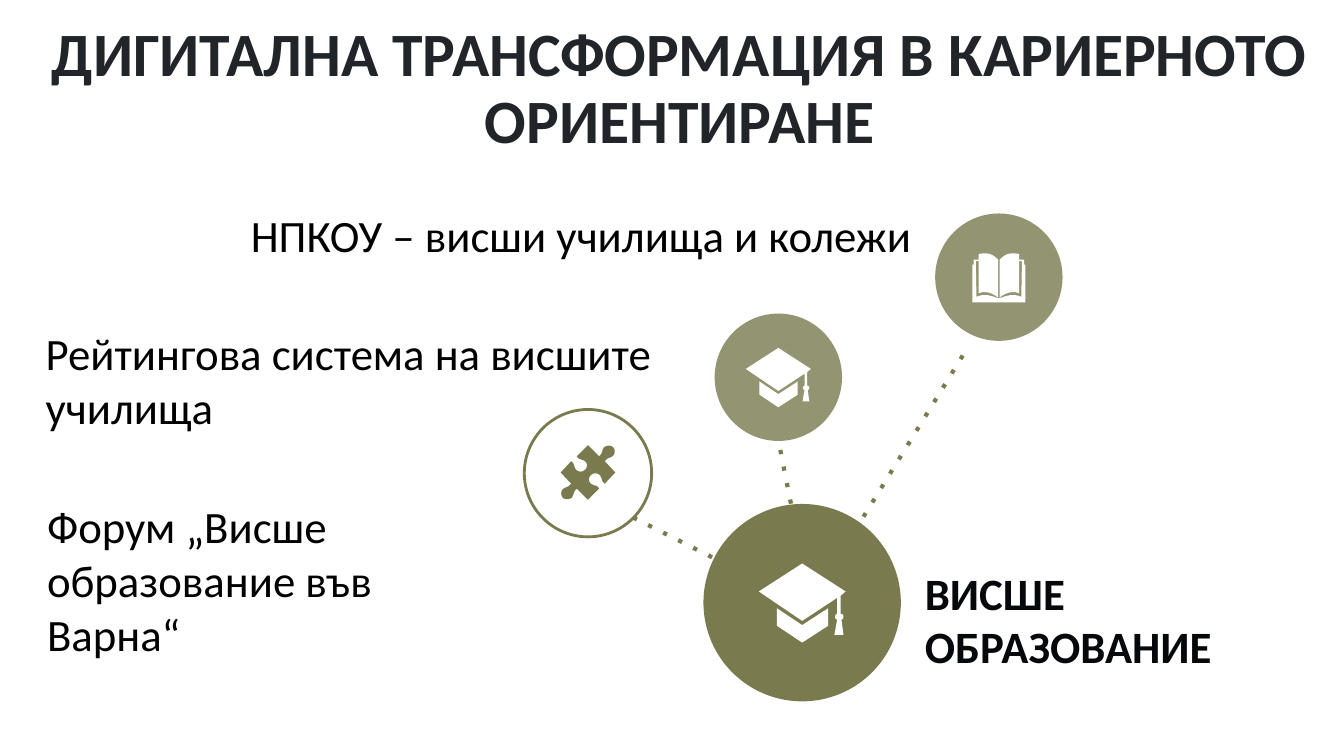
import pptx
import pptx.util
import pptx.dml.color
import pptx.enum.shapes
import pptx.enum.text
import pptx.oxml
import pptx.oxml.ns
from lxml import etree

Pt = pptx.util.Pt
qn = pptx.oxml.ns.qn
ANCHOR = pptx.enum.text.MSO_ANCHOR
ALIGN = pptx.enum.text.PP_ALIGN
COLORS = {"olive": "797B4F", "white": "FFFFFF", "title": "212529",
          "label": "07080B", "text": "000000"}
RGB = {name: pptx.dml.color.RGBColor.from_string(value) for name, value in COLORS.items()}


def flatten(segments, steps=6):
    """Turn points (x, y) and cubic curves (x1, y1, x2, y2, x, y) into points."""
    points = [segments[0]]
    for segment in segments[1:]:
        if len(segment) == 2:
            points.append(segment)
            continue
        bezier = [points[-1], segment[:2], segment[2:4], segment[4:]]
        for step in range(1, steps + 1):
            t = step / steps
            weights = ((1 - t) ** 3, 3 * t * (1 - t) ** 2, 3 * t * t * (1 - t), t ** 3)
            points.append(tuple(sum(w * p[axis] for w, p in zip(weights, bezier))
                                for axis in (0, 1)))
    return points


def add_icon(contours, center_x, center_y, color, size=1):
    """Draw contours given in points around a centre."""
    builder = None
    for contour in contours:
        placed = [(Pt(center_x + x * size), Pt(center_y + y * size)) for x, y in contour]
        if builder is None:
            builder = slide.shapes.build_freeform(*placed[0])
        else:
            builder.move_to(*placed[0])
        builder.add_line_segments(placed[1:], close=True)
    icon = builder.convert_to_shape()
    icon.shadow.inherit = False
    icon.fill.solid()
    icon.fill.fore_color.rgb = RGB[color]
    icon.line.fill.background()


presentation = pptx.Presentation()
presentation.slide_width, presentation.slide_height = Pt(960), Pt(540)
slide = presentation.slides.add_slide(presentation.slide_layouts[6])

# Dotted spokes from the hub
for start_x, start_y, end_x, end_y in [
        (579, 430.5, 692, 247), (579, 430.5, 556, 314.5), (573, 430.5, 452, 369.5)]:
    spoke = slide.shapes.add_connector(pptx.enum.shapes.MSO_CONNECTOR.STRAIGHT,
                                       Pt(start_x), Pt(start_y), Pt(end_x), Pt(end_y))
    spoke.line.color.rgb = RGB["olive"]
    spoke.line.width = Pt(3)
    properties = spoke.element.spPr
    etree.SubElement(properties.find(qn("a:ln")), qn("a:prstDash")).set("val", "dot")
    etree.SubElement(properties, qn("a:effectLst"))

# Circles: left, top, diameter, opacity in percent (0 is a ring)
for left, top, diameter, opacity in [
        (502.5, 360, 141, 100), (668, 152.5, 91, 80), (374.5, 292.5, 91, 0), (510.5, 224, 91, 80)]:
    circle = slide.shapes.add_shape(pptx.enum.shapes.MSO_SHAPE.OVAL,
                                    Pt(left), Pt(top), Pt(diameter), Pt(diameter))
    circle.shadow.inherit = False
    if opacity == 0:
        circle.fill.background()
        circle.line.color.rgb = RGB["olive"]
        circle.line.width = Pt(2)
        continue
    circle.fill.solid()
    circle.fill.fore_color.rgb = RGB["olive"]
    circle.line.fill.background()
    if opacity < 100:
        fill_color = circle.element.spPr.find(qn("a:solidFill"))[0]
        etree.SubElement(fill_color, qn("a:alpha")).set("val", str(opacity * 1000))

# Graduation caps
cap = [
    [(-18, 4), (0, 16), (18.5, 4), (18.5, 16.5), (0, 28.5), (-18, 16.5)],
    flatten([(0, -28), (31, -8), (27.5, -5), (27.5, 8), (29, 8, 29.5, 9, 29.5, 10),
             (29.5, 11, 29, 12, 28, 12), (29.5, 23), (23, 23), (25, 12),
             (24, 12, 23.5, 11, 23.5, 10), (23.5, 9, 24, 8, 25, 8),
             (25, -3.5), (0, 13), (-31, -8)]),
]
add_icon(cap, 573, 430.5, "white")
add_icon(cap, 556, 269.5, "white", 0.75)

# Puzzle piece: one half, then the same half turned around
puzzle_half = flatten([
    (8, -11.5), (11, -14.5, 9.5, -15, 11.5, -18), (13.5, -19.5, 16.5, -19.5, 18, -18),
    (19.5, -16.5, 19.5, -13.5, 18, -12), (15.5, -10, 14.5, -11, 12, -8), (19.5, 0), (12, 8),
    (9, 6, 10.5, 3.5, 8, 1.5), (6, 0, 3.5, 0.5, 2, 2), (0.5, 3.5, 0, 6, 2, 8),
    (5, 10, 6, 8.5, 8, 11.5), (0, 19.5)])
add_icon([puzzle_half + [(-x, -y) for x, y in puzzle_half]], 420, 337.5, "olive")

# Book: right half, then its mirror
book_half = flatten([
    (0.5, 14.5), (6.5, 12.5, 10, 11, 16, 13.5), (16.5, -12), (14.5, -12), (14.5, 11),
    (10, 9, 5, 10.5, 0.5, 14), (0.5, -13), (3.5, -16, 6, -17.5, 9.5, -17.5),
    (11, -17.5, 12.5, -17.5, 14.5, -17), (14.5, -13), (18, -13), (18, -9.5),
    (19, -9.5), (19, 17.5)])
add_icon([book_half + [(-x, y) for x, y in reversed(book_half)]], 713.5, 198.5, "white")

# Title and labels
label_format = {"size": Pt(32), "name": "Calibri", "bold": False}
label_margins = {"margin_left": Pt(9.6), "margin_right": Pt(9.6),
                 "margin_top": Pt(4.8), "margin_bottom": Pt(4.8)}
for text, box, color, font_format, frame_format, paragraph_format in [
        ("ДИГИТАЛНА ТРАНСФОРМАЦИЯ В КАРИЕРНОТО ОРИЕНТИРАНЕ", (24, 12, 923, 104.5), "title",
         {"size": Pt(44), "bold": True}, {"vertical_anchor": ANCHOR.MIDDLE,
         "margin_left": Pt(7.2), "margin_right": Pt(7.2)},
         {"alignment": ALIGN.CENTER, "line_spacing": 0.9}),
        ("ВИСШЕ ОБРАЗОВАНИЕ", (651, 399, 270, 102), "label", {"bold": True}, {}, {}),
        ("Форум „Висше образование във Варна“", (24, 351.5, 343, 130), "text", {}, {}, {}),
        ("Рейтингова система на висшите училища", (23, 228, 480, 88), "text", {}, {}, {}),
        ("НПКОУ – висши училища и колежи", (169.5, 143.5, 502, 48), "text", {}, {}, {})]:
    frame = slide.shapes.add_textbox(*map(Pt, box)).text_frame
    frame.word_wrap = True
    paragraph = frame.paragraphs[0]
    run = paragraph.add_run()
    run.text = text
    run.font.color.rgb = RGB[color]
    for target, values in [(frame, label_margins | frame_format),
                           (paragraph, paragraph_format),
                           (run.font, label_format | font_format)]:
        for attribute, value in values.items():
            setattr(target, attribute, value)

presentation.save("out.pptx")
